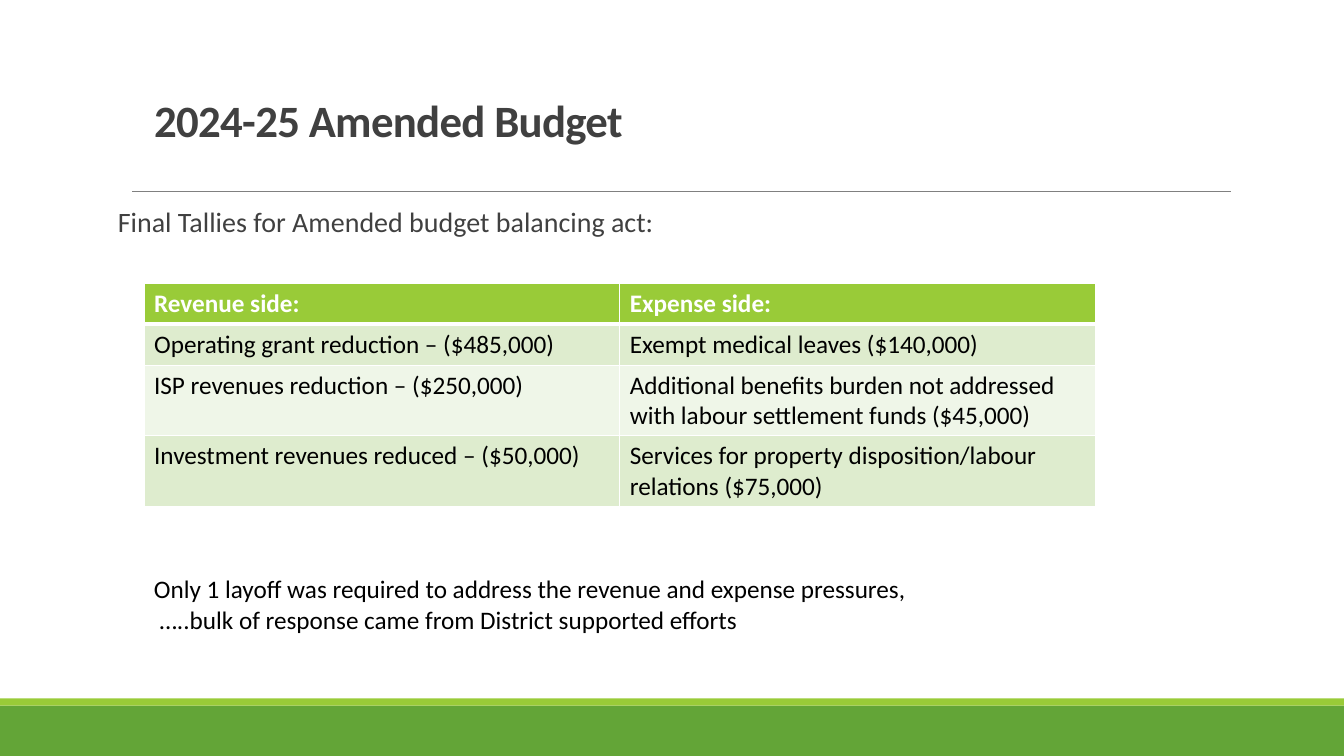
from dataclasses import dataclass

from lxml.etree import SubElement
from pptx import Presentation
from pptx.dml.color import RGBColor
from pptx.enum.shapes import MSO_CONNECTOR, MSO_SHAPE
from pptx.enum.text import MSO_ANCHOR, MSO_AUTO_SIZE, PP_ALIGN
from pptx.oxml import parse_xml
from pptx.oxml.ns import nsdecls, qn
from pptx.util import Cm, Pt


@dataclass(frozen=True)
class Theme:
    font: str = "Calibri"
    heading: str = "404040"
    body: str = "000000"
    white: str = "FFFFFF"
    rule: str = "808080"
    green: str = "63A537"
    lime: str = "99CB38"
    bands: tuple = ("DEECCE", "EFF6E8")
    title_size: int = 32
    lead_size: int = 20
    body_size: int = 18


THEME = Theme()
WIDTH, HEIGHT = 33.87, 19.05
BUDGET_ROWS = [
    ("Revenue side:", "Expense side:"),
    ("Operating grant reduction – ($485,000)", "Exempt medical leaves ($140,000)"),
    ("ISP revenues reduction – ($250,000)",
     "Additional benefits burden not addressed with labour settlement funds ($45,000)"),
    ("Investment revenues reduced – ($50,000)",
     "Services for property disposition/labour relations ($75,000)"),
]
ROW_HEIGHTS = (1.03, 1.03, 1.78, 1.78)
LAYOFF_NOTE = (
    "Only 1 layoff was required to address the revenue and expense pressures,",
    " …..bulk of response came from District supported efforts",
)


def add_run(paragraph, wording, size, color, bold=False):
    run = paragraph.add_run()
    run.text = wording
    run.font.name = THEME.font
    run.font.size = Pt(size)
    run.font.bold = bold
    run.font.color.rgb = RGBColor.from_string(color)
    return run


def add_footer_bands(slide, left, top, width, height):
    """Draw a green band with a thin lime stripe along its top."""
    stripe = 0.18
    for y, depth, color in ((top + stripe, height - stripe, THEME.green),
                            (top, stripe, THEME.lime)):
        band = slide.shapes.add_shape(
            MSO_SHAPE.RECTANGLE, Cm(left), Cm(y), Cm(width), Cm(depth))
        band.shadow.inherit = False
        band.fill.solid()
        band.fill.fore_color.rgb = RGBColor.from_string(color)
        band.line.fill.background()


def add_title_rule(slide, left, top, width):
    rule = slide.shapes.add_connector(
        MSO_CONNECTOR.STRAIGHT, Cm(left), Cm(top), Cm(left + width), Cm(top))
    rule.line.color.rgb = RGBColor.from_string(THEME.rule)
    rule.line.width = Pt(0.5)
    SubElement(rule.element.spPr, qn("a:effectLst"))


def set_title(slide, left, top, width, height):
    title = slide.shapes.title
    title.left, title.top, title.width, title.height = map(Cm, (left, top, width, height))
    frame = title.text_frame
    frame.auto_size = MSO_AUTO_SIZE.NONE
    frame.vertical_anchor = MSO_ANCHOR.BOTTOM
    paragraph = frame.paragraphs[0]
    paragraph.alignment = PP_ALIGN.LEFT
    paragraph.line_spacing = 0.85
    run = add_run(paragraph, "2024-25 Amended Budget", THEME.title_size, THEME.heading, True)
    run.font.element.set("spc", "-50") if hasattr(run.font, "element") else \
        run._r.get_or_add_rPr().set("spc", "-50")


def add_lead(slide, left, top, width, height):
    frame = slide.shapes.add_textbox(*map(Cm, (left, top, width, height))).text_frame
    frame.word_wrap = True
    frame.margin_left = frame.margin_right = 0
    paragraph = frame.paragraphs[0]
    paragraph.line_spacing = 0.9
    paragraph.space_before, paragraph.space_after = Pt(12), Pt(2)
    add_run(paragraph, "Final Tallies for Amended budget balancing act:",
            THEME.lead_size, THEME.heading)


def add_layoff_note(slide, left, top, width, height):
    frame = slide.shapes.add_textbox(*map(Cm, (left, top, width, height))).text_frame
    frame.word_wrap = True
    for index, wording in enumerate(LAYOFF_NOTE):
        paragraph = frame.add_paragraph() if index else frame.paragraphs[0]
        add_run(paragraph, wording, THEME.body_size, THEME.body)


def set_borders(cell, top, bottom):
    """Give the cell white borders; top and bottom are widths in points."""
    properties = cell._tc.get_or_add_tcPr()
    sides = (("lnL", 1), ("lnR", 1), ("lnT", top), ("lnB", bottom))
    for position, (side, weight) in enumerate(sides):
        properties.insert(position, parse_xml(
            f'<a:{side} {nsdecls("a")} w="{Pt(weight)}"><a:solidFill>'
            f'<a:srgbClr val="{THEME.white}"/></a:solidFill></a:{side}>'))


def add_budget_table(slide, left, top, width):
    table = slide.shapes.add_table(
        len(BUDGET_ROWS), 2, Cm(left), Cm(top), Cm(width), Cm(sum(ROW_HEIGHTS))).table
    for column in table.columns:
        column.width = Cm(width / 2)
    for r, (entries, row_height) in enumerate(zip(BUDGET_ROWS, ROW_HEIGHTS)):
        table.rows[r].height = Cm(row_height)
        header = r == 0
        fill = THEME.lime if header else THEME.bands[(r - 1) % 2]
        for c, entry in enumerate(entries):
            cell = table.cell(r, c)
            cell.fill.solid()
            cell.fill.fore_color.rgb = RGBColor.from_string(fill)
            set_borders(cell, top=3 if r == 1 else 1, bottom=3 if header else 1)
            add_run(cell.text_frame.paragraphs[0], entry, THEME.body_size,
                    THEME.white if header else THEME.body, header)


def build_budget_slide(presentation):
    slide = presentation.slides.add_slide(presentation.slide_layouts[5])
    add_footer_bands(slide, 0, 17.6, WIDTH, HEIGHT - 17.6)
    add_title_rule(slide, 3.33, 4.83, 27.68)
    set_title(slide, 3.63, 1.75, 19.35, 2.08)
    add_lead(slide, 2.97, 5.13, 13.97, 1.37)
    add_layoff_note(slide, 3.63, 14.33, 21.29, 1.8)
    add_budget_table(slide, 3.63, 7.14, 23.98)


def main():
    presentation = Presentation()
    presentation.slide_width, presentation.slide_height = Cm(WIDTH), Cm(HEIGHT)
    build_budget_slide(presentation)
    presentation.save("out.pptx")


if __name__ == "__main__":
    main()
